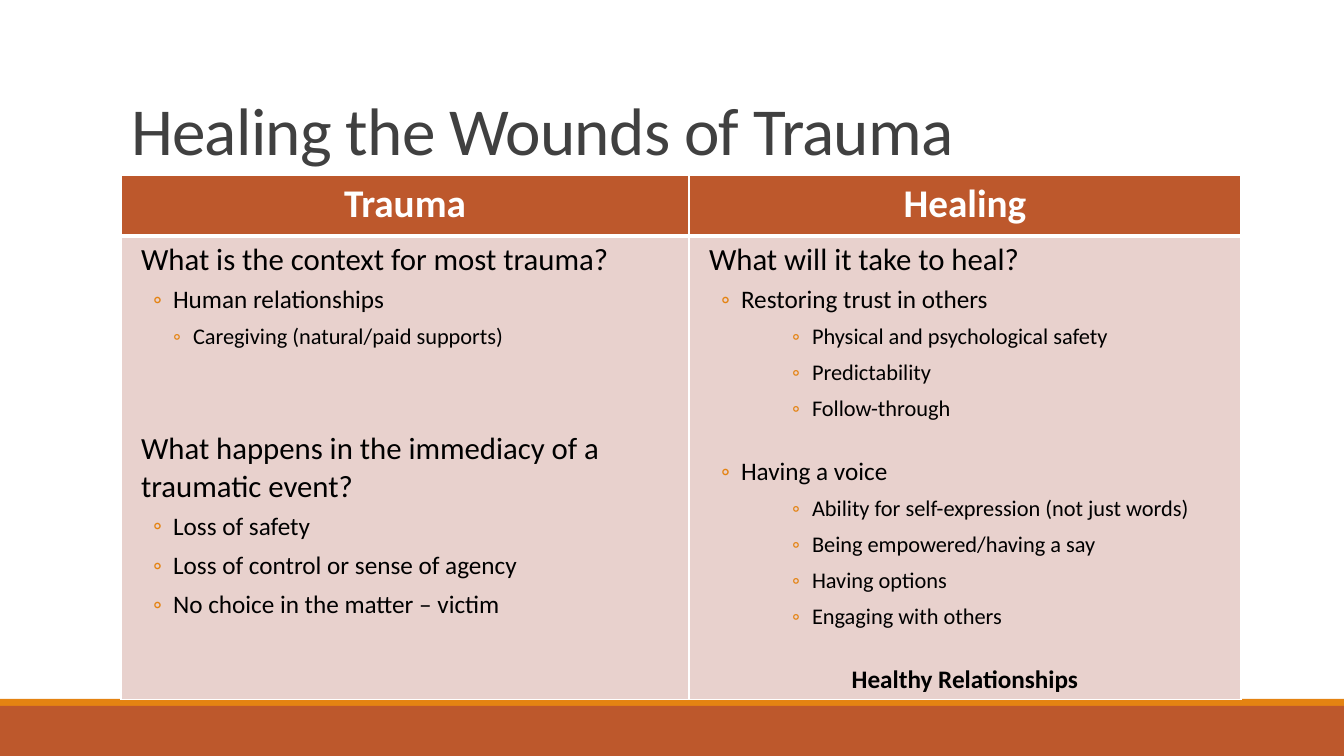
from lxml import etree
from pptx import Presentation
from pptx import util as u
from pptx.dml.color import RGBColor
from pptx.enum import shapes, text
from pptx.oxml import ns

RUST = RGBColor(0xBD, 0x58, 0x2C)
ORANGE = RGBColor(0xE4, 0x83, 0x12)
BLUSH = RGBColor(0xE8, 0xD1, 0xCD)
GREY = RGBColor(0x40, 0x40, 0x40)
WHITE = RGBColor(0xFF, 0xFF, 0xFF)
BLACK = RGBColor(0, 0, 0)
FONT = "Calibri"

TITLE = "Healing the Wounds of Trauma"
# Each line: style, wording, and optionally the space before it in points
COLUMNS = [
    ("Trauma", [
        ("question", "What is the context for most trauma?"),
        ("point", "Human relationships"),
        ("detail", "Caregiving (natural/paid supports)"),
        ("question", "What happens in the immediacy of a traumatic event?", 53),
        ("point", "Loss of safety"),
        ("point", "Loss of control or sense of agency"),
        ("point", "No choice in the matter – victim"),
    ]),
    ("Healing", [
        ("question", "What will it take to heal?"),
        ("point", "Restoring trust in others"),
        ("deep", "Physical and psychological safety"),
        ("deep", "Predictability"),
        ("deep", "Follow-through"),
        ("point", "Having a voice", 20.2),
        ("deep", "Ability for self-expression (not just words)"),
        ("deep", "Being empowered/having a say"),
        ("deep", "Having options"),
        ("deep", "Engaging with others"),
        ("result", "Healthy Relationships", 20.2),
    ]),
]
# Style: level, size, left margin in px, space before and after in points, bulleted
STYLES = {
    "question": (0, 22, 10, 0, 2, False),
    "point": (1, 18, 42, 2, 4, True),
    "detail": (2, 16, 62, 2, 4, True),
    "deep": (3, 16, 113, 2, 4, True),
    "result": (1, 18, 0, 2, 4, False),
}
BARS = [(699, 7, ORANGE), (706, 50, RUST)]
SLIDE_W, SLIDE_H = 1344, 756
TITLE_BOX = (121, 31, 1109, 143)
TABLE_LEFT, TABLE_TOP = 121, 175
COL_WIDTHS = [568, 552]
ROW_HEIGHTS = [61, 463]
BULLET_HANG = 20


def px(n):
    return u.Emu(round(n * 914400 / 100.8))


def add_span(para, wording, size, color, bold=False):
    span = para.add_run()
    span.text = wording
    span.font.name = FONT
    span.font.size = u.Pt(size)
    span.font.color.rgb = color
    span.font.bold = bold
    return span


def add_child(parent, tag, **attributes):
    return etree.SubElement(parent, ns.qn(tag), attributes)


def paint_cell(cell, color, top, bottom):
    """Give the cell white borders, then its fill; widths are in points."""
    props = cell._tc.get_or_add_tcPr()
    for side, width in (("L", 1), ("R", 1), ("T", top), ("B", bottom)):
        border = add_child(props, "a:ln" + side, w=str(u.Pt(width)))
        fill = add_child(border, "a:solidFill")
        add_child(fill, "a:srgbClr", val=str(WHITE))
    cell.fill.solid()
    cell.fill.fore_color.rgb = color


def add_line(para, style, wording, gap=None):
    level, size, margin, before, after, bulleted = STYLES[style]
    para.level = level
    para.space_before = u.Pt(before if gap is None else gap)
    para.space_after = u.Pt(after)
    props = para._p.get_or_add_pPr()
    props.set("marL", str(px(margin)))
    props.set("indent", str(px(-BULLET_HANG if bulleted else 0)))
    if bulleted:
        color = add_child(props, "a:buClr")
        add_child(color, "a:srgbClr", val=str(ORANGE))
        add_child(props, "a:buFont", typeface=FONT)
        add_child(props, "a:buChar", char="◦")
    if style == "result":
        para.alignment = text.PP_ALIGN.CENTER
    add_span(para, wording, size, BLACK, style == "result")


def add_bars(page):
    for top, height, color in BARS:
        bar = page.shapes.add_shape(shapes.MSO_SHAPE.RECTANGLE,
                                    0, px(top), px(SLIDE_W), px(height))
        bar.shadow.inherit = False
        bar.fill.solid()
        bar.fill.fore_color.rgb = color
        bar.line.fill.background()


def format_title(page):
    title = page.shapes.title
    title.left, title.top, title.width, title.height = map(px, TITLE_BOX)
    frame = title.text_frame
    frame.word_wrap = True
    frame.auto_size = text.MSO_AUTO_SIZE.NONE
    frame.vertical_anchor = text.MSO_ANCHOR.BOTTOM
    para = frame.paragraphs[0]
    para.alignment = text.PP_ALIGN.LEFT
    para.line_spacing = 0.85
    span = add_span(para, TITLE, 48, GREY)
    span.font._element.set("spc", "-50")


def add_comparison(page):
    table = page.shapes.add_table(
        2, len(COLUMNS), px(TABLE_LEFT), px(TABLE_TOP),
        px(sum(COL_WIDTHS)), px(sum(ROW_HEIGHTS))).table
    for row, height in zip(table.rows, ROW_HEIGHTS):
        row.height = px(height)
    for i, (heading, lines) in enumerate(COLUMNS):
        table.columns[i].width = px(COL_WIDTHS[i])
        head, body = table.cell(0, i), table.cell(1, i)
        paint_cell(head, RUST, 1, 3)
        paint_cell(body, BLUSH, 3, 1)
        para = head.text_frame.paragraphs[0]
        para.alignment = text.PP_ALIGN.CENTER
        add_span(para, heading, 28, WHITE, True)
        frame = body.text_frame
        for n, line in enumerate(lines):
            add_line(frame.add_paragraph() if n else frame.paragraphs[0], *line)


def main():
    deck = Presentation()
    deck.slide_width, deck.slide_height = px(SLIDE_W), px(SLIDE_H)
    page = deck.slides.add_slide(deck.slide_layouts[5])
    add_bars(page)
    format_title(page)
    add_comparison(page)
    deck.save("out.pptx")


if __name__ == "__main__":
    main()
